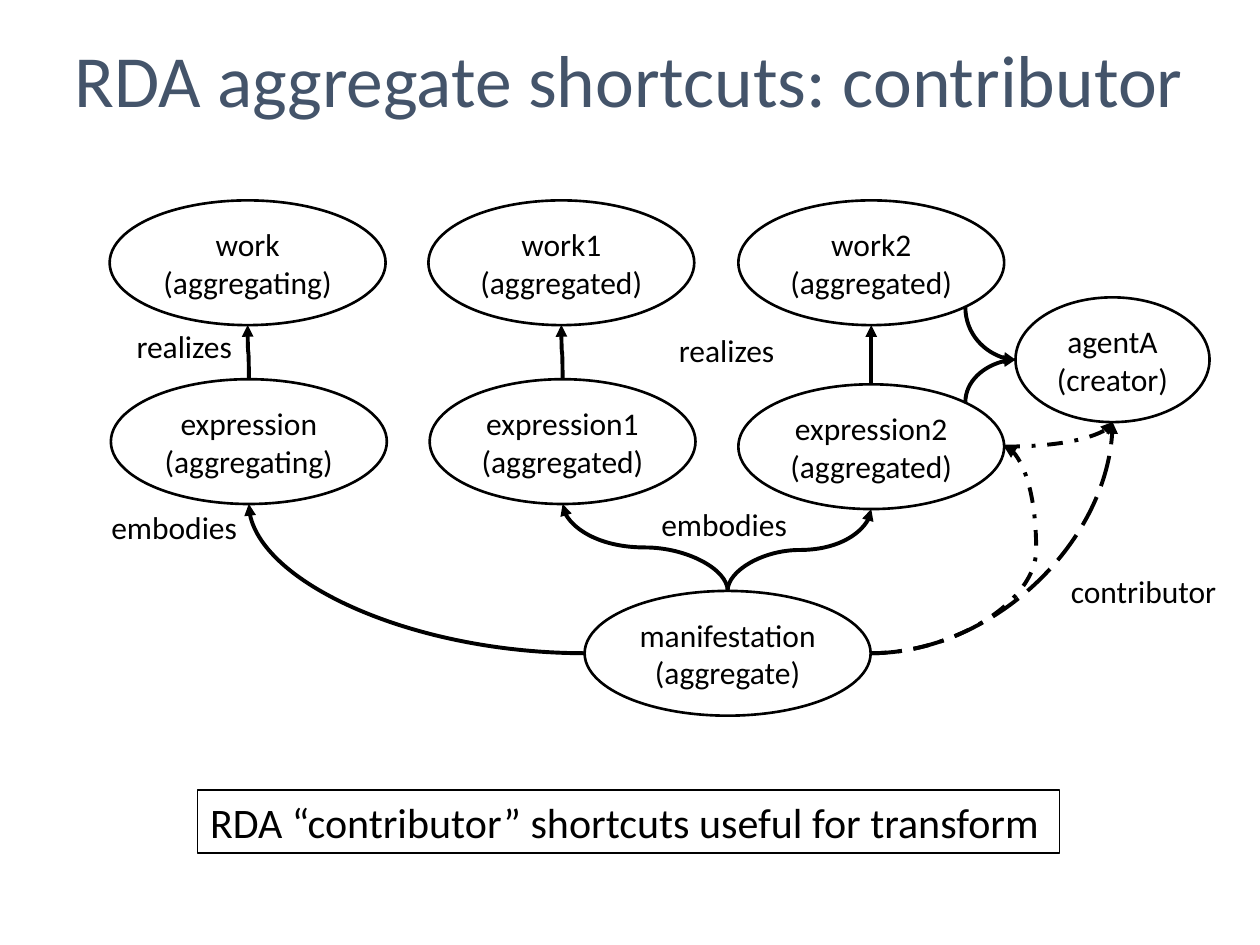
import math

from pptx import Presentation
from pptx import util as u
from pptx.dml.color import RGBColor
from pptx.enum import dml, shapes, text
from pptx.oxml.ns import qn
from lxml import etree

COLORS = {"title": "44546A", "ink": "000000", "paper": "FFFFFF"}
FONT = "Calibri"
TOP, LEFT, BOTTOM, BOTTOM_RIGHT, RIGHT, TOP_RIGHT = 0, 2, 4, 5, 6, 7
ELLIPSE_HEIGHT = 0.99


def color(name):
    return RGBColor.from_string(COLORS[name])


def write(shape, words, size, align=text.PP_ALIGN.LEFT, ink="ink", wrap=False):
    frame = shape.text_frame
    frame.text = words
    frame.word_wrap = wrap
    for paragraph in frame.paragraphs:
        paragraph.alignment = align
        for run in paragraph.runs:
            run.font.size = u.Pt(size)
            run.font.name = FONT
            run.font.color.rgb = color(ink)


def add_label(slide, box, words, size=18, **style):
    label = slide.shapes.add_textbox(*map(u.Inches, box))
    write(label, words, size, **style)
    return label


def add_ellipse(slide, left, top, width, words):
    ellipse = slide.shapes.add_shape(
        shapes.MSO_SHAPE.OVAL, *map(u.Inches, (left, top, width, ELLIPSE_HEIGHT)))
    ellipse.shadow.inherit = False
    ellipse.fill.background()
    ellipse.line.color.rgb = color("ink")
    ellipse.line.width = u.Pt(1.5)
    write(ellipse, words, 18, text.PP_ALIGN.CENTER)
    ellipse.text_frame.vertical_anchor = text.MSO_ANCHOR.MIDDLE
    return ellipse


def site_point(ellipse, site):
    """Connection sites run counter-clockwise from the top in steps of 45 degrees."""
    angle = math.radians(45 * site)
    x = ellipse.left + ellipse.width / 2 * (1 - math.sin(angle))
    y = ellipse.top + ellipse.height / 2 * (1 - math.cos(angle))
    return round(x), round(y)


def turn_upright(connector, start, end):
    """Rotate the connector so that the curve leaves its start vertically."""
    dx, dy = end[0] - start[0], end[1] - start[1]
    width, height = abs(dy), abs(dx)
    connector.left = round((start[0] + end[0] - width) / 2)
    connector.top = round((start[1] + end[1] - height) / 2)
    connector.width, connector.height = width, height
    frame = connector._element.spPr.find(qn("a:xfrm"))
    quarter = dx > 0 > dy
    frame.rot = 90 if quarter else 270
    frame.flipH = quarter or dy > 0
    frame.flipV = quarter or dx < 0


def connect(slide, source, source_site, target, target_site, dash=None, bend=None):
    start, end = site_point(source, source_site), site_point(target, target_site)
    connector = slide.shapes.add_connector(shapes.MSO_CONNECTOR.CURVE, *start, *end)
    sideways = (LEFT, RIGHT)
    if source_site not in sideways:
        turn_upright(connector, start, end)

    properties = connector._element.spPr
    geometry = properties.find(qn("a:prstGeom"))
    if (source_site in sideways) != (target_site in sideways):
        geometry.set("prst", "curvedConnector2")
    if bend is not None:
        guides = geometry.find(qn("a:avLst"))
        if guides is None:
            guides = etree.SubElement(geometry, qn("a:avLst"))
        etree.SubElement(guides, qn("a:gd"), name="adj1", fmla=f"val {round(bend * 100000)}")

    links = connector._element.nvCxnSpPr.cNvCxnSpPr
    for tag, shape, site in (("a:stCxn", source, source_site), ("a:endCxn", target, target_site)):
        etree.SubElement(links, qn(tag), id=str(shape.shape_id), idx=str(site))

    connector.line.color.rgb = color("ink")
    connector.line.width = u.Pt(2.25)
    if dash:
        connector.line.dash_style = dash
    etree.SubElement(properties.find(qn("a:ln")), qn("a:tailEnd"), type="triangle")
    etree.SubElement(properties, qn("a:effectLst"))


def add_title(slide, box):
    add_label(slide, box, "RDA aggregate shortcuts: contributor", 42, ink="title")


def add_diagram(slide, left, top):
    nodes = {}
    for name, role, x, y, width in (
            ("manifestation", "aggregate", 3.96, 3.1, 2.27),
            ("expression1", "aggregated", 2.73, 1.42, 2.11),
            ("work1", "aggregated", 2.72, 0, 2.11),
            ("expression2", "aggregated", 5.18, 1.46, 2.11),
            ("work2", "aggregated", 5.18, 0, 2.11),
            ("expression", "aggregating", 0.2, 1.42, 2.19),
            ("work", "aggregating", 0.19, 0, 2.19),
            ("agentA", "creator", 7.38, 0.77, 1.54)):
        nodes[name] = add_ellipse(slide, left + x, top + y, width, f"{name}\n({role})")
    nodes["expression1"].fill.solid()
    nodes["expression1"].fill.fore_color.rgb = color("paper")

    dash_dot, long_dash = dml.MSO_LINE.DASH_DOT, dml.MSO_LINE.LONG_DASH
    for source, source_site, target, target_site, *style in (
            ("expression", TOP, "work", BOTTOM),
            ("expression1", TOP, "work1", BOTTOM),
            ("expression2", TOP, "work2", BOTTOM),
            ("manifestation", LEFT, "expression", BOTTOM),
            ("manifestation", TOP, "expression2", BOTTOM),
            ("manifestation", TOP, "expression1", BOTTOM),
            ("work2", BOTTOM_RIGHT, "agentA", LEFT),
            ("expression2", TOP_RIGHT, "agentA", LEFT),
            ("manifestation", RIGHT, "expression2", RIGHT, dash_dot, 1.24),
            ("expression2", RIGHT, "agentA", BOTTOM, dash_dot),
            ("manifestation", RIGHT, "agentA", BOTTOM, long_dash)):
        connect(slide, nodes[source], source_site, nodes[target], target_site, *style)

    start, right = text.PP_ALIGN.LEFT, text.PP_ALIGN.RIGHT
    for words, x, y, width, align, wrap in (
            ("realizes", 4.61, 0.99, 1.03, start, True),
            ("embodies", 4.47, 2.37, 1.3, start, True),
            ("realizes", 0.23, 0.96, 1.03, right, True),
            ("embodies", 0, 2.39, 1.3, right, True),
            ("contributor", 7.72, 2.9, 1.4, start, False)):
        add_label(slide, (left + x, top + y, width, 0.4), words, align=align, wrap=wrap)


def add_note(slide, box):
    note = add_label(slide, box, "RDA “contributor” shortcuts useful for transform", 24)
    note.line.color.rgb = color("ink")
    note.line.width = u.Pt(0.75)


def main():
    presentation = Presentation()
    presentation.slide_width, presentation.slide_height = u.Inches(10), u.Inches(7.5)
    slide = presentation.slides.add_slide(presentation.slide_layouts[6])
    add_diagram(slide, 0.68, 1.59)
    add_title(slide, (0.49, 0.22, 9.09, 0.81))
    add_note(slide, (1.57, 6.27, 6.84, 0.5))
    presentation.save("out.pptx")


if __name__ == "__main__":
    main()
